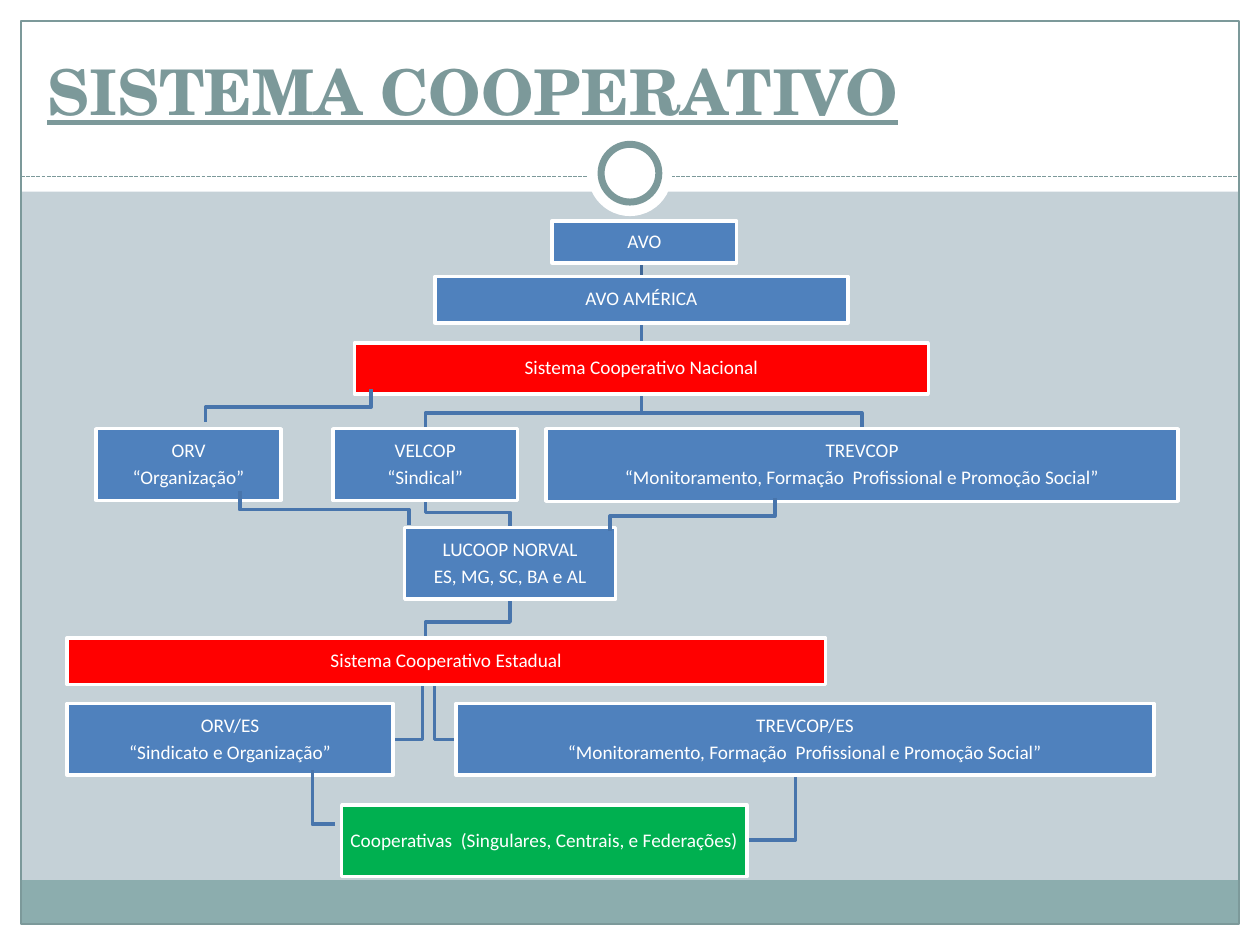
"""Build the organisation chart slide of the cooperative system."""
from dataclasses import dataclass
from typing import Optional

from lxml import etree
from pptx import Presentation
from pptx.dml.color import RGBColor
from pptx.enum.dml import MSO_LINE
from pptx.enum.shapes import MSO_CONNECTOR, MSO_SHAPE
from pptx.enum.text import MSO_ANCHOR, PP_ALIGN
from pptx.oxml.ns import qn
from pptx.util import Pt

RECTANGLE = MSO_SHAPE.RECTANGLE
OVAL = MSO_SHAPE.OVAL
STRAIGHT = MSO_CONNECTOR.STRAIGHT
DASHED = MSO_LINE.SQUARE_DOT
MIDDLE = MSO_ANCHOR.MIDDLE
BOTTOM = MSO_ANCHOR.BOTTOM
CENTER = PP_ALIGN.CENTER
LEFT = PP_ALIGN.LEFT
TOP_SIDE, BOTTOM_SIDE = 0, 2


@dataclass(frozen=True)
class Theme:
    page: str = "C5D1D7"
    white: str = "FFFFFF"
    footer: str = "8CADAE"
    accent: str = "7C999A"
    blue: str = "4F81BD"
    red: str = "FF0000"
    green: str = "00B050"
    link: str = "4875AC"
    first_link: str = "3F6797"
    title_font: str = "TeX Gyre Schola"
    body_font: str = "Calibri"
    title_size: float = 36
    body_size: float = 11
    frame_width: float = 0.75
    link_width: float = 2
    ring_width: float = 4


THEME = Theme()


@dataclass(frozen=True)
class Panel:
    left: float
    top: float
    width: float
    height: float
    fill: Optional[str] = None
    line: Optional[str] = None
    line_width: float = THEME.frame_width
    kind: int = RECTANGLE


@dataclass(frozen=True)
class Unit:
    lines: tuple[str, ...]
    left: float
    top: float
    width: float
    height: float = 41
    fill: str = THEME.blue


@dataclass(frozen=True)
class Elbow:
    start: tuple[float, float]
    bend: float
    end: tuple[float, float]


FRAME = [
    Panel(0, 528, 720, 12, THEME.white),
    Panel(0, 0, 720, 109.5, THEME.white),
    Panel(0, 0, 12, 540, THEME.white),
    Panel(708, 0, 12, 540, THEME.white),
    Panel(12, 503, 696, 25, THEME.footer),
    Panel(12, 12, 696, 516, line=THEME.accent),
]
RING = [
    Panel(336, 75.5, 48, 48, THEME.white, kind=OVAL),
    Panel(343.5, 82.5, 33, 33, THEME.white, THEME.accent, THEME.ring_width, OVAL),
]

TASKS = "“Monitoramento, Formação  Profissional e Promoção Social”"
WORLD = Unit(("AVO",), 315.5, 126.25, 105.5, 24)
CONTINENT = Unit(("AVO AMÉRICA",), 248.5, 158, 236, 26.5)
NATIONAL = Unit(("Sistema Cooperativo Nacional",), 202.5, 196, 328, 29.25, THEME.red)
UNITS = [
    WORLD,
    CONTINENT,
    NATIONAL,
    Unit(("ORV", "“Organização”"), 55, 245, 105.5),
    Unit(("VELCOP", "“Sindical”"), 190.25, 245, 105.5),
    Unit(("LUCOOP NORVAL", "ES, MG, SC, BA e AL"), 231.25, 301.5, 120.5),
    Unit(("Sistema Cooperativo Estadual",), 38.25, 364.5, 433.5, 26.75, THEME.red),
    Unit(("ORV/ES", "“Sindicato e Organização”"), 38.25, 402, 186.5),
    Unit(("TREVCOP/ES", TASKS), 260.5, 402, 399),
    Unit(("Cooperativas  (Singulares, Centrais, e Federações)",),
         195.25, 460, 231.5, fill=THEME.green),
    Unit(("TREVCOP", TASKS), 312, 245, 361.25, 41.5),
]
AXIS = CONTINENT.left + CONTINENT.width / 2

BACK_ELBOWS = [
    Elbow((AXIS, 225.25), 236, (492.5, 245)),
    Elbow((AXIS, 225.25), 236, (243, 245)),
    Elbow((243, 286), 292.75, (291.5, 301.5)),
    Elbow((291.5, 342.5), 355.5, (243.25, 364.5)),
    Elbow((248.25, 391.25), 422.5, (260.5, 422.5)),
    Elbow((241.5, 391.25), 422.5, (224.75, 422.5)),
    Elbow((454.5, 443), 480, (426.75, 480)),
]
FRONT_ELBOWS = [
    Elbow((212, 222.25), 232.75, (117.5, 241.25)),
    Elbow((137, 280.75), 291.25, (233.75, 300.25)),
    Elbow((442.75, 284.5), 295, (348.5, 303.5)),
    Elbow((178.5, 440.25), 471, (191.5, 471)),
]


def paint_line(line, color: str, width: float) -> None:
    """Give a line its colour and width."""
    line.color.rgb = RGBColor.from_string(color)
    line.width = Pt(width)


def add_panel(page, panel: Panel):
    """Draw a plain preset shape."""
    box = page.shapes.add_shape(
        panel.kind, Pt(panel.left), Pt(panel.top), Pt(panel.width), Pt(panel.height))
    box.shadow.inherit = False
    if panel.fill:
        box.fill.solid()
        box.fill.fore_color.rgb = RGBColor.from_string(panel.fill)
    else:
        box.fill.background()
    if panel.line:
        paint_line(box.line, panel.line, panel.line_width)
    else:
        box.line.fill.background()
    return box


def add_span(para, text: str, font: str, size: float, color: str):
    """Append a formatted run to a paragraph."""
    span = para.add_run()
    span.text = text
    span.font.name = font
    span.font.size = Pt(size)
    span.font.color.rgb = RGBColor.from_string(color)
    return span


def add_unit(page, unit: Unit):
    """Draw one labelled organisation box."""
    box = add_panel(page, Panel(unit.left, unit.top, unit.width, unit.height,
                                unit.fill, THEME.white, THEME.link_width))
    frame = box.text_frame
    frame.word_wrap = True
    frame.vertical_anchor = MIDDLE
    frame.margin_left = frame.margin_right = Pt(0.7)
    frame.margin_top = frame.margin_bottom = Pt(0.7)
    for index, text in enumerate(unit.lines):
        para = frame.add_paragraph() if index else frame.paragraphs[0]
        para.alignment = CENTER
        para.line_spacing = 0.9
        para.space_after = Pt(3.5)
        add_span(para, text, THEME.body_font, THEME.body_size, THEME.white)
    return box


def add_straight(page, start: tuple[float, float], end: tuple[float, float],
                 color: str, width: float):
    """Draw a straight connector without a shadow."""
    link = page.shapes.add_connector(STRAIGHT, *map(Pt, start + end))
    paint_line(link.line, color, width)
    etree.SubElement(link._element.spPr, qn("a:effectLst"))
    return link


def add_elbow(page, elbow: Elbow) -> None:
    """Draw an open line that leaves vertically and turns at the bend height."""
    corners = [(elbow.start[0], elbow.bend), (elbow.end[0], elbow.bend), elbow.end]
    builder = page.shapes.build_freeform(*map(Pt, elbow.start))
    builder.add_line_segments(
        [(Pt(x), Pt(y)) for x, y in dict.fromkeys(corners)], close=False)
    path = builder.convert_to_shape()
    path.shadow.inherit = False
    path.fill.background()
    paint_line(path.line, THEME.link, THEME.link_width)


def add_title(page, text: str) -> None:
    """Write the underlined slide title."""
    box = page.shapes.add_textbox(Pt(20), Pt(20), Pt(510.5), Pt(57))
    box.text_frame.word_wrap = True
    box.text_frame.vertical_anchor = BOTTOM
    para = box.text_frame.paragraphs[0]
    para.alignment = LEFT
    span = add_span(para, text, THEME.title_font, THEME.title_size, THEME.accent)
    span.font.bold = True
    span.font.underline = True


def main() -> None:
    """Assemble and save the deck."""
    deck = Presentation()
    deck.slide_width, deck.slide_height = Pt(720), Pt(540)
    page = deck.slides.add_slide(deck.slide_layouts[6])
    page.background.fill.solid()
    page.background.fill.fore_color.rgb = RGBColor.from_string(THEME.page)
    for panel in FRAME:
        add_panel(page, panel)
    rule = add_straight(page, (12, 100.75), (708, 100.75), THEME.accent, THEME.frame_width)
    rule.line.dash_style = DASHED
    for panel in RING:
        add_panel(page, panel)
    add_title(page, "SISTEMA COOPERATIVO")
    for elbow in BACK_ELBOWS:
        add_elbow(page, elbow)
    lower = add_straight(page, (AXIS, CONTINENT.top + CONTINENT.height),
                         (AXIS, NATIONAL.top), THEME.link, THEME.link_width)
    upper = add_straight(page, (AXIS, WORLD.top + WORLD.height),
                         (AXIS, CONTINENT.top), THEME.first_link, THEME.link_width)
    boxes = {unit: add_unit(page, unit) for unit in UNITS}
    upper.end_connect(boxes[CONTINENT], TOP_SIDE)
    lower.begin_connect(boxes[CONTINENT], BOTTOM_SIDE)
    lower.end_connect(boxes[NATIONAL], TOP_SIDE)
    for elbow in FRONT_ELBOWS:
        add_elbow(page, elbow)
    deck.save("out.pptx")


if __name__ == "__main__":
    main()
